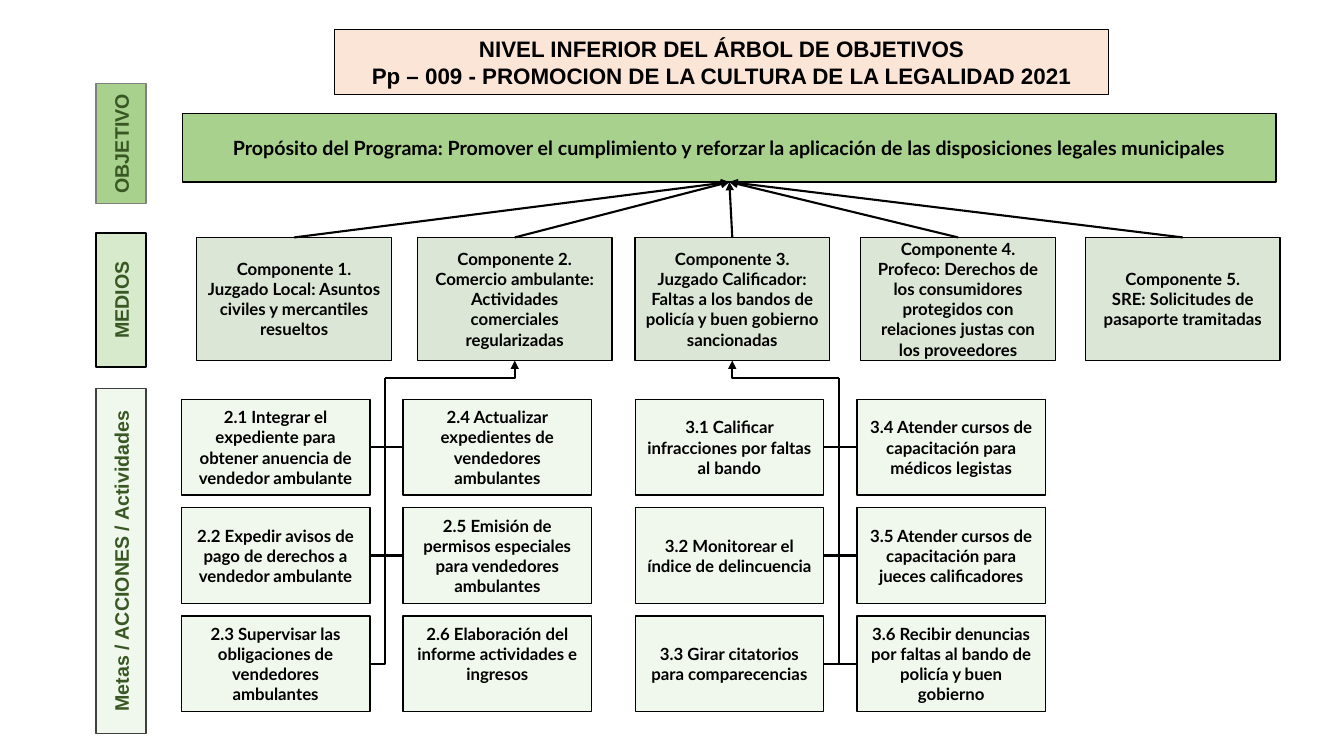
from dataclasses import dataclass

from lxml.etree import SubElement
from pptx import Presentation
from pptx.dml.color import RGBColor
from pptx.enum.shapes import MSO_CONNECTOR, MSO_SHAPE
from pptx.enum.text import MSO_ANCHOR, MSO_AUTO_SIZE, PP_ALIGN
from pptx.oxml.ns import qn
from pptx.util import Pt


@dataclass(frozen=True)
class Theme:
    # Fills are (colour, opacity in percent)
    title_fill: tuple = ("FBE5D6", 100)
    purpose_fill: tuple = ("A9D18E", 100)
    means_fill: tuple = ("A9D18E", 45)
    component_fill: tuple = ("548235", 20)
    activity_fill: tuple = ("C5E0B4", 25)
    black: str = "000000"
    label_text: str = "385723"
    goal_line: str = "808080"
    actions_line: str = "404040"
    label_font: str = "Arial"
    body_font: str = "Lato"
    title_size: float = 16
    heading_size: float = 14
    body_size: float = 12
    box_line: float = 1
    connector_line: float = 1.5


THEME = Theme()

# Labels of the levels: text, top, height, fill, line colour
LEVELS = [
    ("OBJETIVO", 59.8, 85.7, THEME.purpose_fill, THEME.goal_line),
    ("MEDIOS", 166.4, 95.8, THEME.means_fill, THEME.black),
    ("Metas / ACCIONES / Actividades", 277.6, 246.2, THEME.activity_fill, THEME.actions_line),
]

# Left edge and text; "|" is a line break, "\n" a new paragraph
COMPONENTS = [
    (140.6, "Componente 1.|Juzgado Local: Asuntos civiles y mercantiles resueltos"),
    (298.2, "Componente 2.|Comercio ambulante: Actividades comerciales regularizadas"),
    (453.6, "Componente 3.|Juzgado Calificador: Faltas a los bandos de policía y buen gobierno sancionadas"),
    (614.9, "Componente 4.|Profeco: Derechos de los consumidores protegidos con relaciones justas con los proveedores"),
    (775.4, "Componente 5.\nSRE: Solicitudes de pasaporte tramitadas"),
]

TRADE_ACTIVITIES = [
    "2.1 Integrar el expediente para obtener anuencia de vendedor ambulante",
    "2.2 Expedir avisos de pago de derechos a vendedor ambulante",
    "2.3 Supervisar las obligaciones de vendedores ambulantes",
    "2.4 Actualizar expedientes de vendedores ambulantes",
    "2.5 Emisión de permisos especiales para vendedores ambulantes",
    "2.6 Elaboración del informe actividades e ingresos",
]
COURT_ACTIVITIES = [
    "3.1 Calificar infracciones por faltas al bando",
    "3.2 Monitorear el índice de delincuencia",
    "3.3 Girar citatorios para comparecencias",
    "3.4 Atender cursos de capacitación para médicos legistas",
    "3.5 Atender cursos de capacitación para jueces calificadores",
    "3.6 Recibir denuncias por faltas al bando de policía y buen gobierno",
]


def add_box(slide, box, text, fill, size=THEME.body_size, font=THEME.body_font,
            text_color=THEME.black, line_color=THEME.black,
            line_width=THEME.box_line, preset=MSO_SHAPE.FLOWCHART_PROCESS):
    shape = slide.shapes.add_shape(preset, *(Pt(length) for length in box))
    shape.shadow.inherit = False
    color, opacity = fill
    shape.fill.solid()
    shape.fill.fore_color.rgb = RGBColor.from_string(color)
    if opacity < 100:
        color_element = next(shape._element.spPr.iter(qn("a:srgbClr")))
        SubElement(color_element, qn("a:alpha"), val=str(opacity * 1000))
    shape.line.color.rgb = RGBColor.from_string(line_color)
    shape.line.width = Pt(line_width)

    frame = shape.text_frame
    frame.word_wrap = True
    frame.vertical_anchor = MSO_ANCHOR.MIDDLE
    frame.margin_left = frame.margin_right = Pt(7)
    for index, paragraph_text in enumerate(text.split("\n")):
        paragraph = frame.add_paragraph() if index else frame.paragraphs[0]
        paragraph.alignment = PP_ALIGN.CENTER
        for part_index, part in enumerate(paragraph_text.split("|")):
            if part_index:
                paragraph.add_line_break()
            run = paragraph.add_run()
            run.text = part
            run.font.name = font
            run.font.size = Pt(size)
            run.font.bold = True
            run.font.color.rgb = RGBColor.from_string(text_color)
    return shape


def add_link(slide, kind, start, end, arrow=False):
    connector = slide.shapes.add_connector(kind, *(Pt(length) for length in start + end))
    connector.line.color.rgb = RGBColor.from_string(THEME.black)
    connector.line.width = Pt(THEME.connector_line)
    properties = connector._element.spPr
    if kind == MSO_CONNECTOR.ELBOW:  # one bend: across, then up
        properties.find(qn("a:prstGeom")).set("prst", "bentConnector2")
    if arrow:
        SubElement(connector.line._get_or_add_ln(), qn("a:tailEnd"), type="triangle")
    SubElement(properties, qn("a:effectLst"))
    return connector


def add_title(slide, box):
    title = add_box(slide, box,
                    "NIVEL INFERIOR DEL ÁRBOL DE OBJETIVOS\n"
                    "Pp – 009 - PROMOCION DE LA CULTURA DE LA LEGALIDAD 2021",
                    THEME.title_fill, THEME.title_size, THEME.label_font,
                    line_width=0.75, preset=MSO_SHAPE.RECTANGLE)
    title.text_frame.vertical_anchor = MSO_ANCHOR.TOP
    title.text_frame.auto_size = MSO_AUTO_SIZE.SHAPE_TO_FIT_TEXT


def add_level_label(slide, box, text, fill, line_color):
    # The shape lies flat around the centre of the box, then is turned upright
    left, top, width, height = box
    flat_box = (left + (width - height) / 2, top + (height - width) / 2, height, width)
    label = add_box(slide, flat_box, text, fill, THEME.heading_size, THEME.label_font,
                    THEME.label_text, line_color)
    label.rotation = 270


def add_purpose(slide, box):
    return add_box(slide, box,
                   "Propósito del Programa: Promover el cumplimiento y reforzar la "
                   "aplicación de las disposiciones legales municipales",
                   THEME.purpose_fill, THEME.heading_size)


def add_component(slide, box, text, purpose):
    component = add_box(slide, box, text, THEME.component_fill)
    arrow = add_link(slide, MSO_CONNECTOR.STRAIGHT, (0, 0), (0, 0), arrow=True)
    arrow.begin_connect(component, 0)
    arrow.end_connect(purpose, 2)


def add_activities(slide, box, texts, target, unlinked=()):
    """Two columns of three activities, joined by a trunk that leads to the target."""
    left, top, width, height = box
    box_width, box_height, rows = 134.6, 68.4, 3
    column_step = width - box_width
    row_step = (height - box_height) / (rows - 1)
    trunk_x, trunk_top = left + 145.3, top - 15.3
    for index, text in enumerate(texts):
        column, row = divmod(index, rows)
        x, y = left + column * column_step, top + row * row_step
        activity = add_box(slide, (x, y, box_width, box_height), text, THEME.activity_fill)
        if index in unlinked:
            # Text sits one line higher
            activity.text_frame.margin_bottom = Pt(18)
            continue
        inner_side = x if column else x + box_width
        add_link(slide, MSO_CONNECTOR.ELBOW,
                 (inner_side, y + box_height / 2), (trunk_x, trunk_top))
    add_link(slide, MSO_CONNECTOR.ELBOW, (trunk_x, trunk_top), target, arrow=True)


def main():
    presentation = Presentation()
    presentation.slide_width, presentation.slide_height = Pt(960), Pt(540)
    slide = presentation.slides.add_slide(presentation.slide_layouts[6])

    # Heading and level labels
    add_title(slide, (239, 21.4, 553, 46.2))
    for text, top, height, fill, line_color in LEVELS:
        add_level_label(slide, (68.6, top, 35.6, height), text, fill, line_color)

    # Purpose and components
    purpose = add_purpose(slide, (130.5, 81, 781, 49))
    component_top, component_width, component_height = 169.6, 139, 88
    for left, text in COMPONENTS:
        add_component(slide, (left, component_top, component_width, component_height),
                      text, purpose)

    # Activities under components 2 and 3
    groups = [(129.6, TRADE_ACTIVITIES, 1, (5,)), (453.8, COURT_ACTIVITIES, 2, ())]
    for left, texts, component_index, unlinked in groups:
        target = (COMPONENTS[component_index][0] + component_width / 2,
                  component_top + component_height)
        add_activities(slide, (left, 285.3, 293, 223), texts, target, unlinked)

    presentation.save("out.pptx")


if __name__ == "__main__":
    main()
